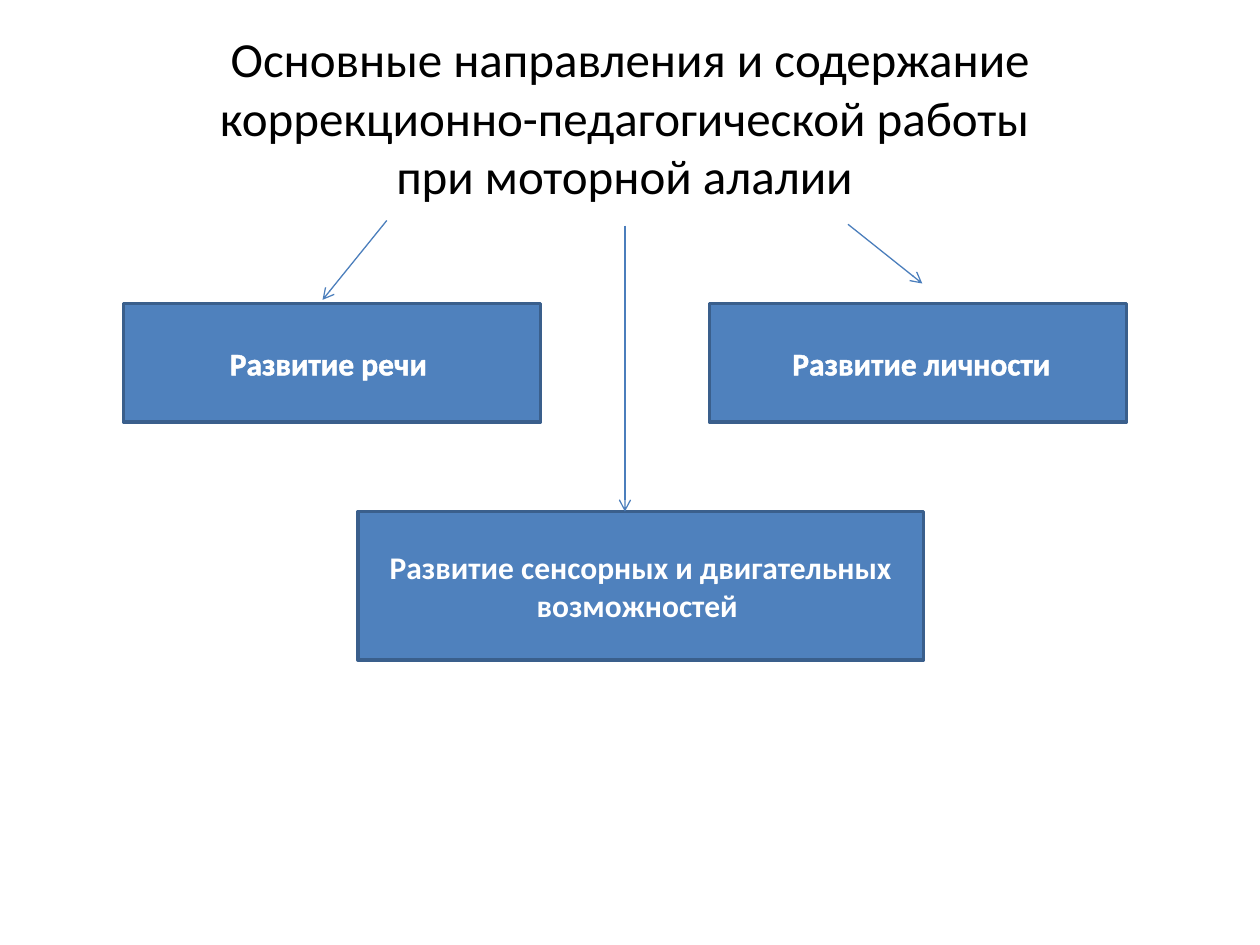
from lxml.etree import SubElement
from pptx import Presentation
from pptx.dml.color import RGBColor
from pptx.enum.shapes import MSO_CONNECTOR as CONNECTOR, MSO_SHAPE as SHAPE
from pptx.enum.text import MSO_ANCHOR as ANCHOR, MSO_AUTO_SIZE as AUTO_SIZE, PP_ALIGN as ALIGN
from pptx.oxml.ns import qn
from pptx.util import Inches, Pt

BLACK = RGBColor(0x00, 0x00, 0x00)
WHITE = RGBColor(0xFF, 0xFF, 0xFF)
BOX_BLUE = RGBColor(0x4F, 0x81, 0xBD)
BORDER_BLUE = RGBColor(0x3A, 0x5F, 0x8C)
ARROW_BLUE = RGBColor(0x4B, 0x7E, 0xBC)

HEADING = "Основные направления и содержание коррекционно-педагогической работы \vпри моторной алалии "
HEADING_FORMAT = {"name": "Calibri", "size": Pt(28), "bold": False}
DIRECTION_FORMAT = {"name": "Calibri", "size": Pt(18), "bold": True}

# Text, box (left, top, width, height), outlined letters
DIRECTIONS = [
    ("Развитие речи ", (0.98, 2.41, 3.31, 0.94), True),
    ("Развитие сенсорных и двигательных возможностей ", (2.84, 4.06, 4.49, 1.18), False),
    (" Развитие личности", (5.63, 2.41, 3.31, 0.94), True),
]
# Start and end points of the arrows from the heading to the directions
ARROWS = [
    ((6.73, 1.78), (7.32, 2.25)),
    ((4.96, 1.79), (4.96, 4.06)),
    ((3.07, 1.75), (2.56, 2.38)),
]


def write(frame, text, color, formats):
    """Fill a text frame with one centred, formatted paragraph."""
    frame.text = text
    frame.word_wrap = True
    frame.vertical_anchor = ANCHOR.MIDDLE
    paragraph = frame.paragraphs[0]
    paragraph.alignment = ALIGN.CENTER
    for run in paragraph.runs:
        run.font.color.rgb = color
        for key, value in formats.items():
            setattr(run.font, key, value)
    return paragraph


def outline_letters(run):
    properties = run._r.get_or_add_rPr()
    outline = SubElement(properties, qn("a:ln"), w=str(Pt(1.45)))
    fill = SubElement(outline, qn("a:solidFill"))
    SubElement(fill, qn("a:srgbClr"), val=str(WHITE))
    properties.insert(0, outline)


def place_heading(slide, box):
    heading = slide.shapes.title
    heading.left, heading.top, heading.width, heading.height = map(Inches, box)
    write(heading.text_frame, HEADING, BLACK, HEADING_FORMAT)
    heading.text_frame.auto_size = AUTO_SIZE.NONE


def place_direction(slide, text, box, outlined):
    direction = slide.shapes.add_shape(SHAPE.RECTANGLE, *map(Inches, box))
    direction.shadow.inherit = False
    direction.fill.solid()
    direction.fill.fore_color.rgb = BOX_BLUE
    direction.line.color.rgb = BORDER_BLUE
    direction.line.width = Pt(2)
    paragraph = write(direction.text_frame, text, WHITE, DIRECTION_FORMAT)
    if outlined:
        outline_letters(paragraph.runs[0])


def place_arrow(slide, start, end):
    arrow = slide.shapes.add_connector(CONNECTOR.STRAIGHT, *map(Inches, start + end))
    arrow.line.color.rgb = ARROW_BLUE
    arrow.line.width = Pt(0.75)
    SubElement(arrow.line._get_or_add_ln(), qn("a:tailEnd"), type="arrow")
    SubElement(arrow._element.spPr, qn("a:effectLst"))


def main():
    deck = Presentation()
    deck.slide_width, deck.slide_height = Inches(10), Inches(7.5)
    slide = deck.slides.add_slide(deck.slide_layouts[5])

    # Heading
    place_heading(slide, (0.5, 0.3, 9, 1.25))
    # Directions of work
    for text, box, outlined in DIRECTIONS:
        place_direction(slide, text, box, outlined)
    # Arrows from the heading
    for start, end in ARROWS:
        place_arrow(slide, start, end)

    deck.save("out.pptx")


if __name__ == "__main__":
    main()
